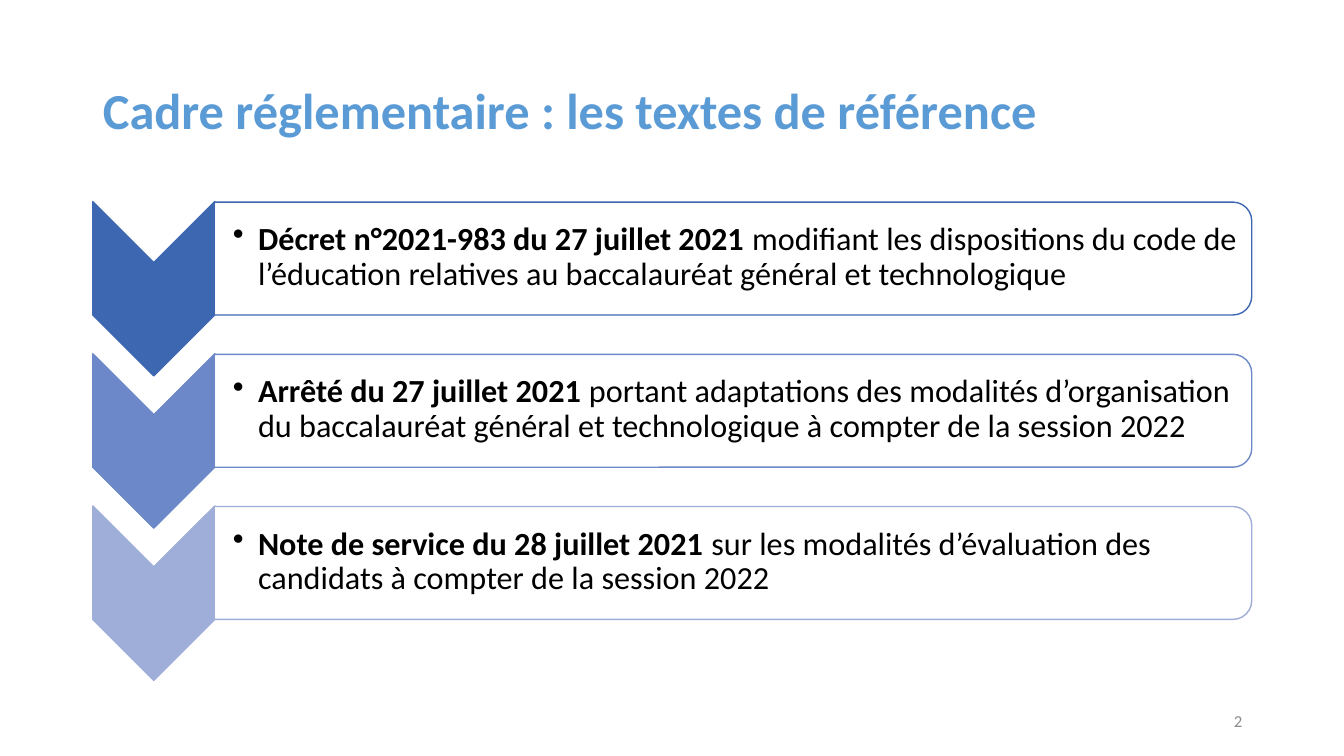
from dataclasses import dataclass

from lxml.etree import SubElement
from pptx import Presentation
from pptx.dml.color import RGBColor
from pptx.enum.shapes import MSO_SHAPE as Shape
from pptx.enum.text import MSO_ANCHOR as Anchor, MSO_AUTO_SIZE as AutoSize, PP_ALIGN as Align
from pptx.oxml.ns import qn
from pptx.util import Pt

PX = 9144  # EMU per px, 100 px to the inch


@dataclass(frozen=True)
class Theme:
    font: str = "Calibri"
    title_color: str = "5B9BD5"
    body_color: str = "000000"
    number_color: str = "8C8C8C"
    panel_color: str = "FFFFFF"
    step_colors: tuple = ("3E67B2", "6C88C8", "9FAED8")
    title_size: int = 36
    body_size: int = 23
    number_size: int = 12


class SlideBuilder:
    def __init__(self, deck, theme):
        self.theme = theme
        self.page = deck.slides.add_slide(deck.slide_layouts[5])

    def style(self, para, size, color, align=Align.LEFT, bold=None):
        para.alignment = align
        font = para.font
        font.name, font.size, font.bold = self.theme.font, Pt(size), bold
        font.color.rgb = RGBColor.from_string(color)

    def title(self, text, left, top, width, height):
        box = self.page.shapes.title
        box.left, box.top = left * PX, top * PX
        box.width, box.height = width * PX, height * PX
        frame = box.text_frame
        frame.text = text
        frame.auto_size = AutoSize.NONE
        frame.vertical_anchor = Anchor.MIDDLE
        para = frame.paragraphs[0]
        para.line_spacing = 0.9
        self.style(para, self.theme.title_size, self.theme.title_color, bold=True)

    def turned_shape(self, kind, fill, line, left, top, width, height):
        """Add a shape turned by 90° that covers the given visible area."""
        shift = (width - height) // 2
        shape = self.page.shapes.add_shape(
            kind, (left + shift) * PX, (top - shift) * PX, height * PX, width * PX)
        shape.rotation = 90
        shape.shadow.inherit = False
        shape.fill.solid()
        shape.fill.fore_color.rgb = RGBColor.from_string(fill)
        shape.line.color.rgb = RGBColor.from_string(line)
        shape.line.width = Pt(1)
        return shape

    def panel(self, line, *area):
        shape = self.turned_shape(
            Shape.ROUND_2_SAME_RECTANGLE, self.theme.panel_color, line, *area)
        color = shape.element.spPr.find(qn("a:solidFill"))[0]
        SubElement(color, qn("a:alpha"), val="90000")

    def text_box(self, left, top, width, height):
        box = self.page.shapes.add_textbox(left * PX, top * PX, width * PX, height * PX)
        frame = box.text_frame
        frame.word_wrap = True
        frame.vertical_anchor = Anchor.MIDDLE
        return frame

    def bullet(self, lead, rest, *area):
        frame = self.text_box(*area)
        frame.margin_left = 18 * PX
        frame.margin_top = frame.margin_right = frame.margin_bottom = 2 * PX
        para = frame.paragraphs[0]
        para.line_spacing = 0.9
        for text, bold in ((lead + " ", True), (rest, False)):
            span = para.add_run()
            span.text, span.font.bold = text, bold
        # Bullet mark and hanging indent
        properties = para._p.get_or_add_pPr()
        properties.set("marL", str(25 * PX))
        properties.set("indent", str(-25 * PX))
        SubElement(properties, qn("a:buChar"), char="•")
        self.style(para, self.theme.body_size, self.theme.body_color)

    def page_number(self, text, *area):
        para = self.text_box(*area).paragraphs[0]
        para.text = text
        self.style(para, self.theme.number_size, self.theme.number_color, Align.RIGHT)


REFERENCES = (
    ("Décret n°2021-983 du 27 juillet 2021",
     "modifiant les dispositions du code de l’éducation relatives au "
     "baccalauréat général et technologique"),
    ("Arrêté du 27 juillet 2021",
     "portant adaptations des modalités d’organisation du baccalauréat "
     "général et technologique à compter de la session 2022"),
    ("Note de service du 28 juillet 2021",
     "sur les modalités d’évaluation des candidats à compter de la session 2022"),
)
FIRST_ROW, ROW_PITCH = 200, 151


def main():
    deck = Presentation()
    deck.slide_width, deck.slide_height = 1333 * PX, 750 * PX
    theme = Theme()
    slide = SlideBuilder(deck, theme)

    # Heading
    slide.title("Cadre réglementaire : les textes de référence", 92, 40, 1150, 145)

    # One chevron, panel and text per reference
    for row, (color, (lead, rest)) in enumerate(zip(theme.step_colors, REFERENCES)):
        top = FIRST_ROW + row * ROW_PITCH
        slide.turned_shape(Shape.CHEVRON, color, color, 92, top, 121, 173)
        slide.panel(color, 213, top, 1029, 112)
        slide.bullet(lead, rest, 213, top + 5, 1024, 101)

    # Footer
    slide.page_number("2", 942, 695, 300, 40)

    deck.save("out.pptx")


if __name__ == "__main__":
    main()
